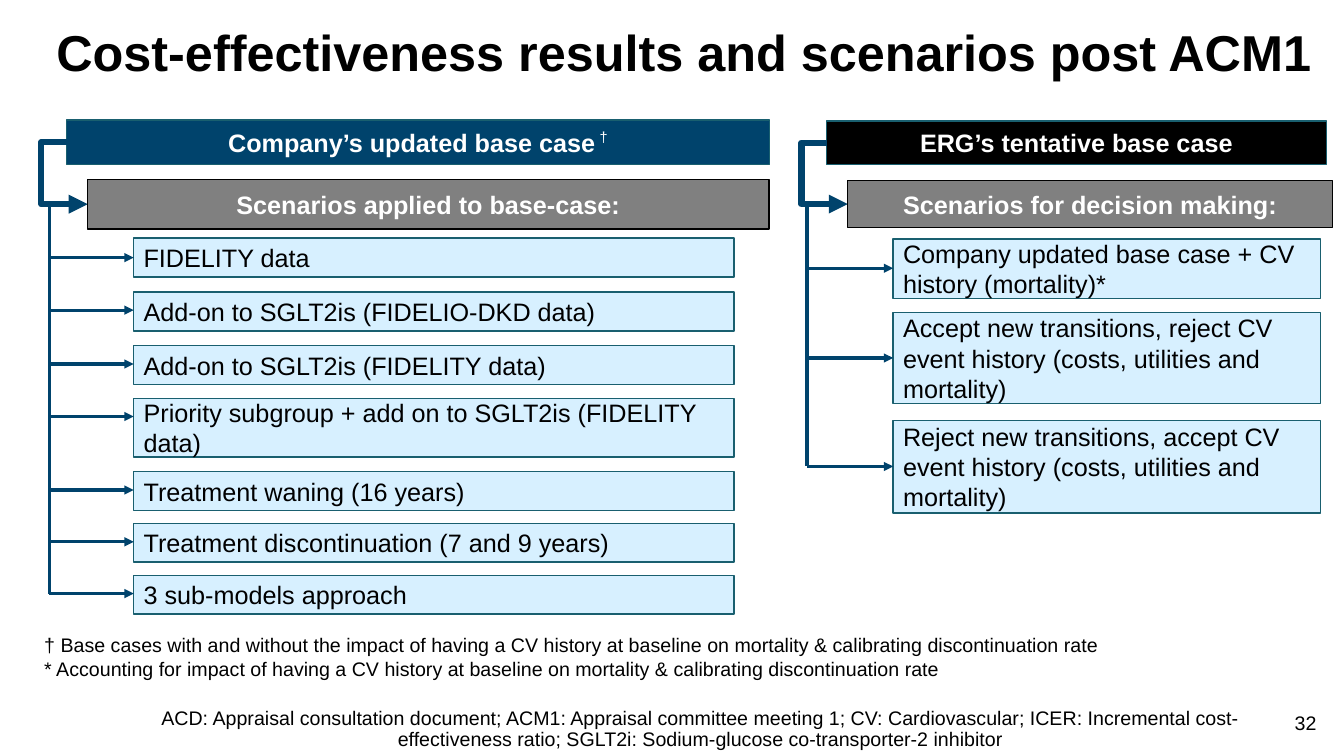
"""Build the slide of base cases and their scenarios after the first meeting."""
from lxml.etree import SubElement
from pptx import Presentation
from pptx.dml.color import RGBColor
from pptx.enum.shapes import MSO_CONNECTOR, MSO_SHAPE
from pptx.enum.text import MSO_ANCHOR, MSO_AUTO_SIZE, PP_ALIGN
from pptx.oxml.ns import qn
from pptx.util import Pt

COLORS = {
    "navy": "00436C", "teal": "195F6F", "sky": "D7F0FF",
    "gray": "808080", "black": "000000", "white": "FFFFFF",
}
TITLE = "Cost-effectiveness results and scenarios post ACM1"
NOTES = [
    "† Base cases with and without the impact of having a CV history at baseline "
    "on mortality & calibrating discontinuation rate",
    "* Accounting for impact of having a CV history at baseline on mortality "
    "& calibrating discontinuation rate",
]
TERMS = (
    "ACD: Appraisal consultation document; ACM1: Appraisal committee meeting 1; "
    "CV: Cardiovascular; ICER: Incremental cost-effectiveness ratio; "
    "SGLT2i: Sodium-glucose co-transporter-2 inhibitor"
)
PAGE = "32"

# Each row holds its text, top, height and the drop from its top to its arrow.
PANELS = [
    {
        "head": "Company’s updated base case", "mark": " †", "fill": "navy",
        "head_box": (47.5, 85.7, 502, 31.7),
        "sub": "Scenarios applied to base-case:",
        "sub_box": (62.6, 128.2, 486.7, 35.3),
        "trunk": 35.3, "left": 95.5, "width": 428.7,
        "rows": [
            ("FIDELITY data", 170, 28, 14),
            ("Add-on to SGLT2is (FIDELIO-DKD data)", 208.5, 28, 13),
            ("Add-on to SGLT2is (FIDELITY data)", 247, 27.5, 13),
            ("Priority subgroup + add on to SGLT2is (FIDELITY data)", 284.5, 42, 13),
            ("Treatment waning (16 years)", 337, 27.5, 13),
            ("Treatment discontinuation (7 and 9 years)", 374, 27.5, 13),
            ("3 sub-models approach", 411, 27.5, 13),
        ],
    },
    {
        "head": "ERG’s tentative base case", "mark": "", "fill": "black",
        "head_box": (590.4, 86.4, 357, 31),
        "sub": "Scenarios for decision making:",
        "sub_box": (605.5, 128.9, 346.3, 33.8),
        "trunk": 576.5, "left": 638, "width": 305.3,
        "rows": [
            ("Company updated base case + CV history (mortality)*", 170.6, 42.5, 21),
            ("Accept new transitions, reject CV event history "
             "(costs, utilities and mortality)", 223.2, 65, 32.5),
            ("Reject new transitions, accept CV event history "
             "(costs, utilities and mortality)", 300.2, 66.2, 33),
        ],
    },
]
REACH = 18


def color(name):
    return RGBColor.from_string(COLORS[name])


def write(shape, lines, size=18, ink="black", bold=False, align=PP_ALIGN.LEFT,
          anchor=MSO_ANCHOR.MIDDLE, spacing=None, mark=""):
    frame = shape.text_frame
    frame.word_wrap = True
    frame.auto_size = MSO_AUTO_SIZE.NONE
    frame.vertical_anchor = anchor
    for i, line in enumerate(lines):
        para = frame.paragraphs[0] if i == 0 else frame.add_paragraph()
        para.alignment = align
        if spacing:
            para.line_spacing = spacing
        for text in filter(None, (line, mark)):
            run = para.add_run()
            run.text = text
            font = run.font
            font.name, font.size = "Arial", Pt(size)
            font.bold = bold and text != mark
            font.color.rgb = color(ink)
            if text == mark:
                font._element.set("baseline", "40000")


def box(slide, place, fill, edge, text, **style):
    shape = slide.shapes.add_shape(MSO_SHAPE.RECTANGLE, *map(Pt, place))
    shape.shadow.inherit = False
    shape.fill.solid()
    shape.fill.fore_color.rgb = color(fill)
    shape.line.color.rgb = color(edge)
    shape.line.width = Pt(1)
    write(shape, [text], **style)


def label(slide, place, lines, **style):
    write(slide.shapes.add_textbox(*map(Pt, place)), lines, **style)


def link(slide, ends, width=2.25, kind=MSO_CONNECTOR.STRAIGHT, arrow=True):
    line = slide.shapes.add_connector(kind, *map(Pt, ends))
    line.line.color.rgb = color("navy")
    line.line.width = Pt(width)
    if arrow:
        SubElement(line.line._get_or_add_ln(), qn("a:tailEnd"), type="triangle")
    SubElement(line._element.spPr, qn("a:effectLst"))
    return line


def panel(slide, data):
    x, y, _, h = data["head_box"]
    sub_x, sub_y, _, sub_h = data["sub_box"]
    start, mid = y + h / 2, sub_y + sub_h / 2
    bold = {"ink": "white", "bold": True, "align": PP_ALIGN.CENTER}

    box(slide, data["head_box"], data["fill"], "teal", data["head"],
        mark=data["mark"], **bold)
    elbow = link(slide, (x, start, sub_x, mid), 4.5, MSO_CONNECTOR.ELBOW)
    bend = round(-REACH / (sub_x - x) * 100000)
    guides = elbow._element.spPr.find(qn("a:prstGeom")).find(qn("a:avLst"))
    SubElement(guides, qn("a:gd"), name="adj1", fmla=f"val {bend}")
    box(slide, data["sub_box"], "gray", "black", data["sub"], **bold)

    trunk, left = data["trunk"], data["left"]
    for text, top, height, drop in data["rows"]:
        box(slide, (left, top, data["width"], height), "sky", "teal", text)
        link(slide, (trunk, top + drop, left, top + drop))
    link(slide, (trunk, mid, trunk, top + drop), arrow=False)


def main():
    deck = Presentation()
    deck.slide_width, deck.slide_height = Pt(960), Pt(540)
    slide = deck.slides.add_slide(deck.slide_layouts[5])
    title = slide.shapes.title
    title.left, title.top, title.width, title.height = map(Pt, (33, 16.6, 914.4, 39.6))
    write(title, [TITLE], size=36, bold=True, anchor=MSO_ANCHOR.TOP, spacing=0.9)
    for data in PANELS:
        panel(slide, data)
    label(slide, (24.5, 448.6, 834.5, 41), NOTES, size=14, anchor=MSO_ANCHOR.TOP)
    label(slide, (77.8, 499, 845.3, 41), [TERMS], size=14, spacing=0.9,
          align=PP_ALIGN.CENTER, anchor=MSO_ANCHOR.BOTTOM)
    label(slide, (910.8, 504, 36.7, 28.8), [PAGE], size=14,
          align=PP_ALIGN.RIGHT, anchor=MSO_ANCHOR.TOP)
    deck.save("out.pptx")


if __name__ == "__main__":
    main()
